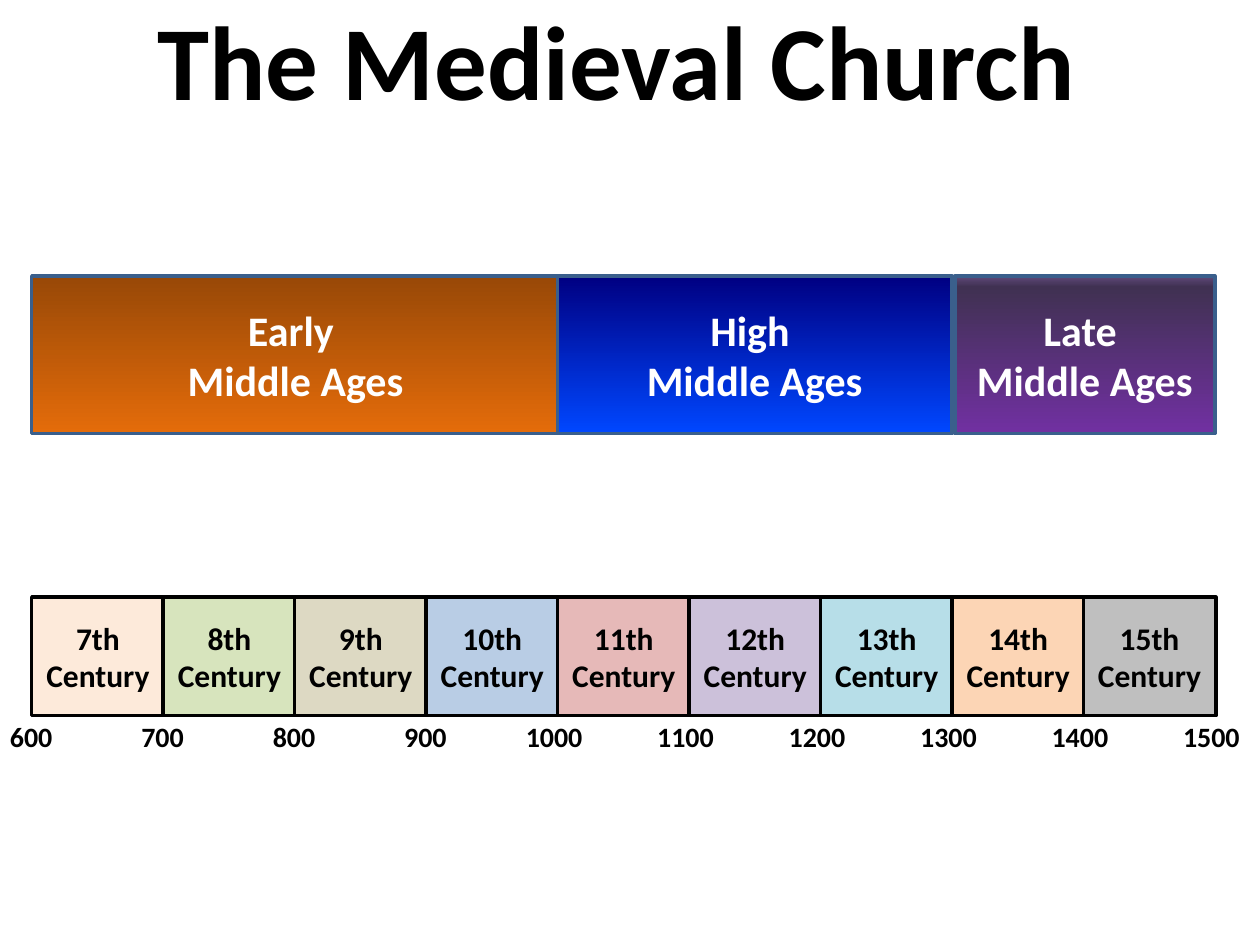
import pptx
import pptx.util
import pptx.dml.color
import pptx.enum.shapes
import pptx.enum.text
import pptx.oxml.ns
import lxml.etree

Cm, Pt = pptx.util.Cm, pptx.util.Pt
RGB = pptx.dml.color.RGBColor.from_string
ALIGN = pptx.enum.text.PP_ALIGN
MIDDLE = pptx.enum.text.MSO_ANCHOR.MIDDLE
qn = pptx.oxml.ns.qn

COLORS = {
    "black": "000000", "white": "FFFFFF", "age_line": "3A5F8C",
    "7th": "FDEADA", "8th": "D7E4BD", "9th": "DDD9C3",
    "10th": "B9CDE5", "11th": "E6B9B8", "12th": "CCC1DA",
    "13th": "B7DEE8", "14th": "FCD5B5", "15th": "BFBFBF",
    "early_top": "984807", "early_bottom": "E46C0A",
    "high_top": "000082", "high_bottom": "0047FF",
    "late_top": "604A7B", "late_upper": "403152", "late_bottom": "7030A0",
}
LEFT, PITCH = 0.64, 2.65

prs = pptx.Presentation()
prs.slide_width, prs.slide_height = Cm(25.4), Cm(19.05)
s = prs.slides.add_slide(prs.slide_layouts[6])


def write(sp, text, size, color, align=ALIGN.CENTER):
    tf = sp.text_frame
    tf.word_wrap = True
    tf.text = text
    for p in tf.paragraphs:
        p.alignment = align
        p.font.name = "Calibri"
        p.font.size = Pt(size)
        p.font.bold = True
        p.font.color.rgb = RGB(COLORS[color])
    return tf


def add_box(x, y, w, h, line):
    sp = s.shapes.add_shape(pptx.enum.shapes.MSO_SHAPE.RECTANGLE, Cm(x), Cm(y), Cm(w), Cm(h))
    sp.shadow.inherit = False
    sp.line.color.rgb = RGB(COLORS[line])
    sp.line.width = Pt(2)
    sp.text_frame.vertical_anchor = MIDDLE
    return sp


title = s.shapes.add_textbox(Cm(1), Cm(0.08), Cm(22.86), Cm(2.2))
write(title, "The Medieval Church", 60, "black").vertical_anchor = MIDDLE

ages = [
    ("Early", 0, 4, 10.64, [(0, "early_top"), (100, "early_bottom")]),
    ("High", 4, 7, 7.95, [(0, "high_top"), (100, "high_bottom")]),
    ("Late", 7, 9, 5.24, [(0, "late_top"), (7, "late_upper"), (98, "late_bottom")]),
]
for name, start, end, width, stops in ages:
    right = LEFT + end * PITCH
    sp = add_box(right - width if name == "Late" else LEFT + start * PITCH, 5.56, width, 3.18, "age_line")
    sp.fill.gradient()
    sp.fill.gradient_angle = 270
    gs_list = sp._element.spPr.find(qn("a:gradFill")).find(qn("a:gsLst"))
    for gs in list(gs_list):
        gs_list.remove(gs)
    for pos, color in stops:
        gs = lxml.etree.SubElement(gs_list, qn("a:gs"), pos=str(pos * 1000))
        lxml.etree.SubElement(gs, qn("a:srgbClr"), val=COLORS[color])
    write(sp, f"{name} \nMiddle Ages", 24, "white")

for i in range(9):
    name = f"{i + 7}th"
    sp = add_box(LEFT + i * PITCH, 12.04, 2.67, 2.39, "black")
    sp.fill.solid()
    sp.fill.fore_color.rgb = RGB(COLORS[name])
    write(sp, f"{name}\nCentury" if i > 3 else f"{name} Century", 18, "black")

for i in range(10):
    year = 600 + i * 100
    offset, width = (0.69, 1.37) if year < 1000 else (0.89, 1.8)
    sp = s.shapes.add_textbox(Cm(LEFT + i * PITCH - offset), Cm(14.38), Cm(width), Cm(0.94))
    tf = write(sp, str(year), 16, "black", ALIGN.LEFT)
    tf.word_wrap = year >= 1000

prs.save("out.pptx")
